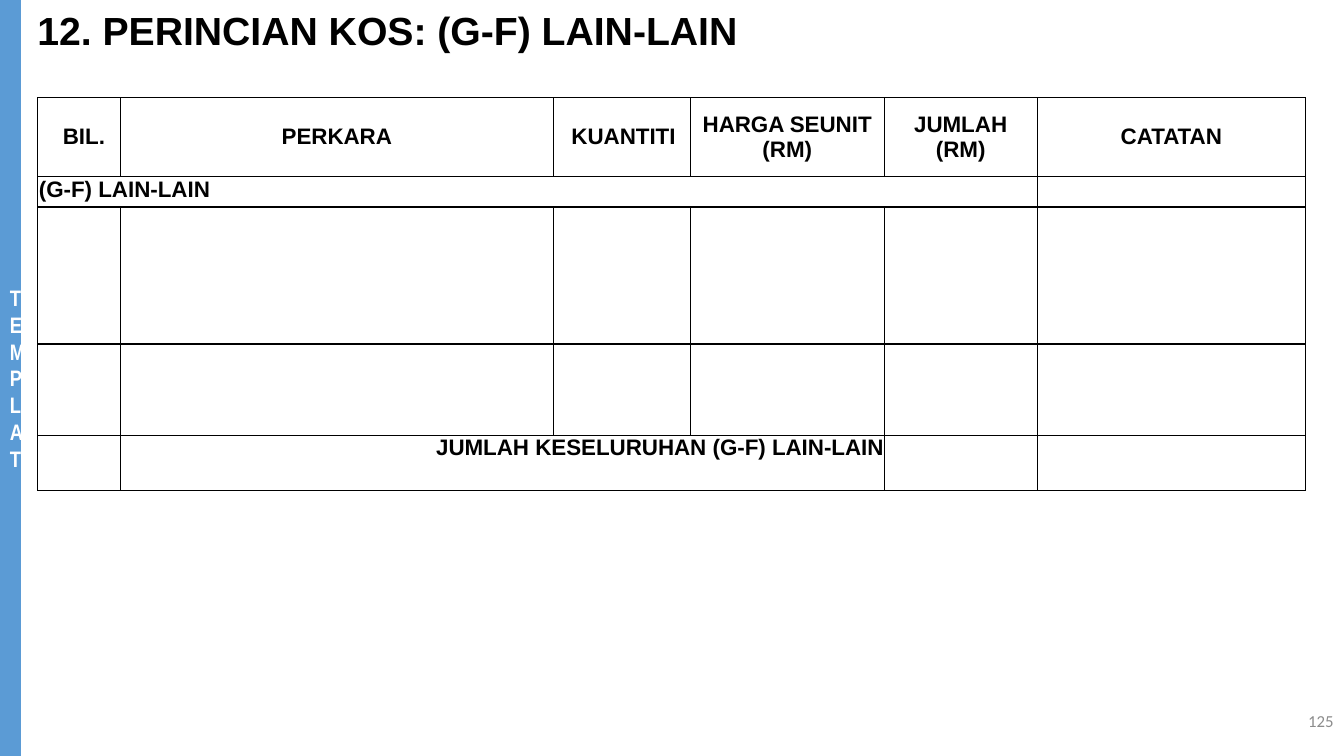
from lxml import etree
from pptx import Presentation
from pptx import util as u
from pptx.dml.color import RGBColor
from pptx.enum import shapes, text
from pptx.oxml.ns import qn

# Content
TITLE = "12. PERINCIAN KOS: (G-F) LAIN-LAIN"
SIDE = "TEMPLAT"
PAGE = "125"
HEADS = ["BIL.", "PERKARA", "KUANTITI", "HARGA SEUNIT\n(RM)", "JUMLAH\n(RM)", "CATATAN"]
GROUP = "(G-F) LAIN-LAIN"
TOTAL = "JUMLAH KESELURUHAN (G-F) LAIN-LAIN"
COLS = [2.08, 10.92, 3.45, 4.88, 3.86, 6.76]
ROWS = [1.98, 0.77, 3.45, 2.31, 1.38]
SHIFT = {0: 0.25, 2: 0.08}  # left margin of two headings
INK = {"bar": "5B9BD5", "white": "FFFFFF", "black": "000000", "grey": "8C8C8C"}
ALIGN, ANCHOR = text.PP_ALIGN, text.MSO_ANCHOR


def write(frame, words, size, face, ink, align, bold=True):
    frame.text = words
    for par in frame.paragraphs:
        par.alignment = align
        for run in par.runs:
            font = run.font
            font.size, font.name, font.bold = u.Pt(size), face, bold
            font.color.rgb = RGBColor.from_string(INK[ink])


def label(box, *style, **more):
    frame = slide.shapes.add_textbox(*map(u.Cm, box)).text_frame
    frame.word_wrap = True
    frame.vertical_anchor = ANCHOR.MIDDLE
    write(frame, *style, **more)
    return frame


def border(cell):
    props = cell._tc.get_or_add_tcPr()
    for side in ("lnL", "lnR", "lnT", "lnB"):
        line = etree.SubElement(props, qn("a:" + side), w=str(u.Pt(1)))
        fill = etree.SubElement(line, qn("a:solidFill"))
        etree.SubElement(fill, qn("a:srgbClr"), val=INK["black"])


def fill_cell(cell, words, align, anchor=ANCHOR.MIDDLE):
    cell.vertical_anchor = anchor
    write(cell.text_frame, words, 16, "Arial", "black", align)


deck = Presentation()
deck.slide_width, deck.slide_height = u.Cm(33.87), u.Cm(19.05)
slide = deck.slides.add_slide(deck.slide_layouts[6])

# Side bar: narrow enough to wrap after each letter
bar = slide.shapes.add_shape(shapes.MSO_SHAPE.RECTANGLE, 0, 0, u.Cm(0.53), deck.slide_height)
bar.shadow.inherit = False
bar.fill.solid()
bar.fill.fore_color.rgb = RGBColor.from_string(INK["bar"])
bar.line.fill.background()
bar.text_frame.word_wrap = True
bar.text_frame.vertical_anchor = ANCHOR.MIDDLE
write(bar.text_frame, SIDE, 16, "Arial Narrow", "white", ALIGN.CENTER)

# Cost table
size = (u.Cm(sum(COLS)), u.Cm(sum(ROWS)))
table = slide.shapes.add_table(len(ROWS), len(COLS), u.Cm(0.95), u.Cm(2.46), *size).table
for col, width in zip(table.columns, COLS):
    col.width = u.Cm(width)
for row, height in zip(table.rows, ROWS):
    row.height = u.Cm(height)
for cell in table.iter_cells():
    cell.margin_left = cell.margin_right = cell.margin_top = cell.margin_bottom = 0
    border(cell)
    cell.fill.solid()
    cell.fill.fore_color.rgb = RGBColor.from_string(INK["white"])
for spot, words in enumerate(HEADS):
    head = table.cell(0, spot)
    head.margin_left = u.Cm(SHIFT.get(spot, 0))
    fill_cell(head, words, ALIGN.CENTER)

# Merged rows
group, total = table.cell(1, 0), table.cell(4, 1)
group.merge(table.cell(1, 4))
total.merge(table.cell(4, 3))
group.margin_left = u.Cm(0.03)
fill_cell(group, GROUP, ALIGN.LEFT)
group.text_frame.paragraphs[0].line_spacing = u.Pt(15.7)
fill_cell(total, TOTAL, ALIGN.RIGHT, ANCHOR.TOP)

# Title and page number
title = label((0.69, 0, 29.21, 1.65), TITLE, 28, "Arial", "black", ALIGN.LEFT)
title.paragraphs[0].line_spacing = 0.9
label((26.24, 17.65, 7.62, 1.02), PAGE, 12, "Calibri", "grey", ALIGN.RIGHT, bold=False)

deck.save("out.pptx")
